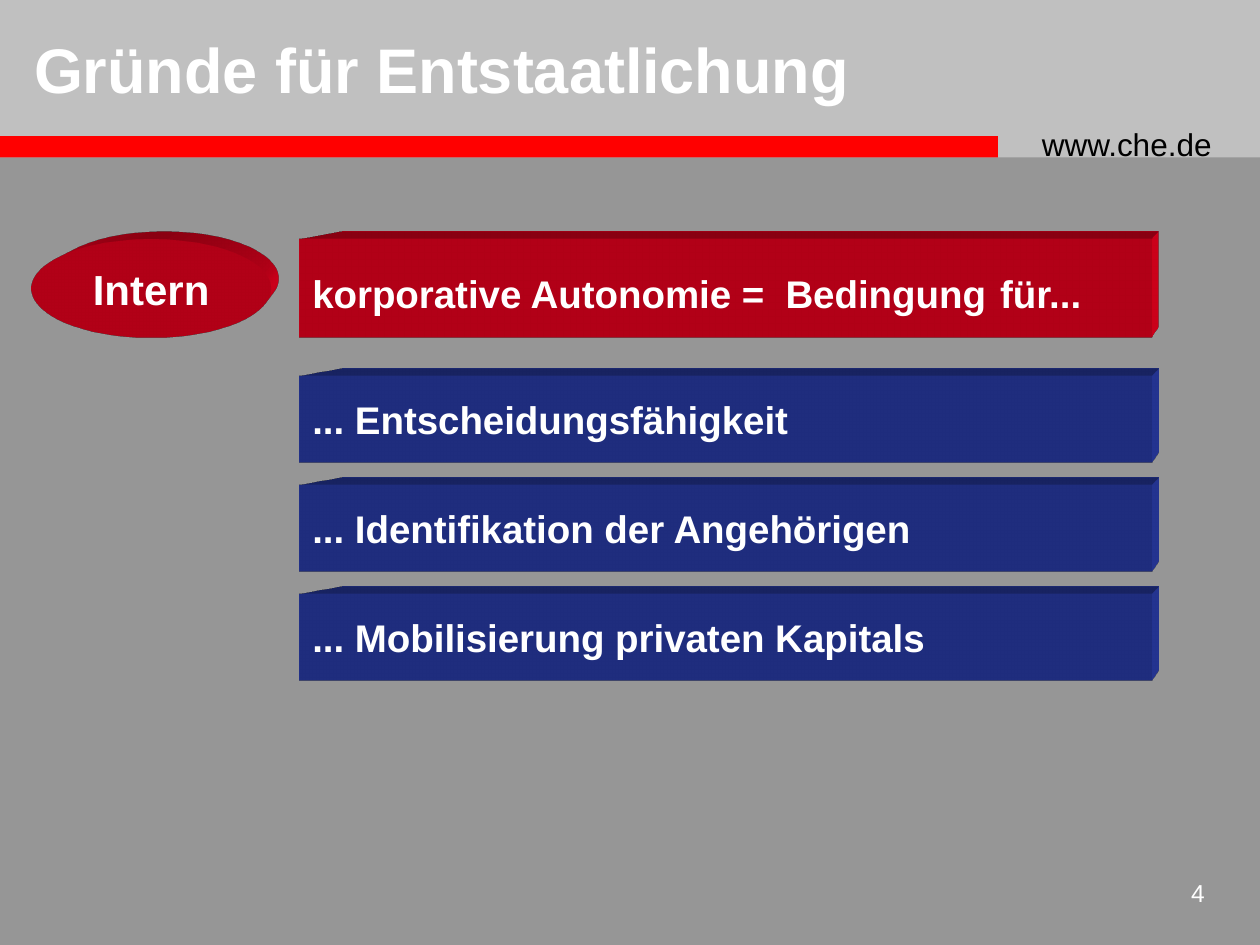
from lxml import etree
from pptx import Presentation
from pptx.dml.color import RGBColor
from pptx.enum.shapes import MSO_SHAPE
from pptx.enum.text import MSO_ANCHOR, PP_ALIGN
from pptx.oxml import parse_xml
from pptx.oxml.ns import nsdecls, qn
from pptx.util import Inches, Pt

RECT, OVAL = MSO_SHAPE.RECTANGLE, MSO_SHAPE.OVAL
LEFT, CENTER, RIGHT = PP_ALIGN.LEFT, PP_ALIGN.CENTER, PP_ALIGN.RIGHT
TOP, MIDDLE = MSO_ANCHOR.TOP, MSO_ANCHOR.MIDDLE
GREY = RGBColor(0x96, 0x96, 0x96)
SILVER = RGBColor(0xC0, 0xC0, 0xC0)
BRIGHT_RED = RGBColor(0xFF, 0x00, 0x00)
RED = RGBColor(0xE8, 0x00, 0x1E)
BLUE = RGBColor(0x29, 0x3B, 0xA5)
WHITE = RGBColor(0xFF, 0xFF, 0xFF)
BLACK = RGBColor(0x00, 0x00, 0x00)

TITLE = "Gründe für Entstaatlichung"
WEB_ADDRESS = "www.che.de"
PAGE_NUMBER = "4"
CATEGORY = "Intern"
CONDITION = [("korporative Autonomie =  Bedingung", 22), (" ", 28), ("für...", 22)]
CONSEQUENCES = [
    "... Entscheidungsfähigkeit",
    "... Identifikation der Angehörigen",
    "... Mobilisierung privaten Kapitals",
]

BAR_LEFT, BAR_WIDTH = 2.38, 6.75
HEAD_TOP, HEAD_HEIGHT = 1.9, 0.78
LIST_TOP, LIST_STEP, LIST_HEIGHT = 2.99, 0.865, 0.68


def write(shape, text, size=22, color=WHITE, bold=True, align=LEFT, anchor=MIDDLE, wrap=False):
    frame = shape.text_frame
    frame.word_wrap = wrap
    frame.vertical_anchor = anchor
    paragraph = frame.paragraphs[0]
    paragraph.alignment = align
    pieces = [(text, size)] if isinstance(text, str) else text
    for piece, piece_size in pieces:
        run = paragraph.add_run()
        run.text = piece
        run.font.name = "Arial"
        run.font.size = Pt(piece_size)
        run.font.bold = bold
        run.font.color.rgb = color


def add_block(slide, kind, box, color):
    block = slide.shapes.add_shape(kind, *map(Inches, box))
    block.shadow.inherit = False
    block.fill.solid()
    block.fill.fore_color.rgb = color
    block.line.fill.background()
    return block


def extrude(block, color):
    properties = block.fill._xPr
    properties.append(parse_xml(
        f'<a:scene3d {nsdecls("a")}><a:camera prst="legacyPerspectiveTopRight"/>'
        '<a:lightRig rig="legacyFlat3" dir="b"/></a:scene3d>'))
    depth = parse_xml(
        f'<a:sp3d {nsdecls("a")} extrusionH="430200" prstMaterial="legacyMatte"/>')
    extrusion_color = etree.SubElement(depth, qn("a:extrusionClr"))
    etree.SubElement(extrusion_color, qn("a:srgbClr"), val=str(color))
    properties.append(depth)


def add_raised(slide, kind, box, color, text, **text_format):
    block = add_block(slide, kind, box, color)
    extrude(block, color)
    write(block, text, **text_format)


def add_label(slide, box, text, **text_format):
    write(slide.shapes.add_textbox(*map(Inches, box)), text,
          bold=False, anchor=TOP, **text_format)


def main():
    deck = Presentation()
    deck.slide_width, deck.slide_height = Inches(10), Inches(7.5)
    slide = deck.slides.add_slide(deck.slide_layouts[5])
    slide.background.fill.solid()
    slide.background.fill.fore_color.rgb = GREY

    add_block(slide, RECT, (0, 0, 10, 1.25), SILVER)
    add_block(slide, RECT, (-0.01, 1.08, 7.93, 0.17), BRIGHT_RED)
    add_label(slide, (8.17, 0.94, 1.75, 0.4), WEB_ADDRESS, size=18, color=BLACK)
    add_label(slide, (9.08, 6.92, 0.58, 0.42), PAGE_NUMBER, size=14, align=RIGHT)

    title = slide.shapes.title
    title.left, title.top, title.width, title.height = map(Inches, (0.17, 0.17, 7.29, 0.75))
    write(title, TITLE, size=36, wrap=True)
    slide.shapes._spTree.append(title._element)

    add_raised(slide, RECT, (BAR_LEFT, HEAD_TOP, BAR_WIDTH, HEAD_HEIGHT), RED, CONDITION)
    for index, consequence in enumerate(CONSEQUENCES):
        top = LIST_TOP + index * LIST_STEP
        add_raised(slide, RECT, (BAR_LEFT, top, BAR_WIDTH, LIST_HEIGHT), BLUE, consequence)
    add_raised(slide, OVAL, (0.25, HEAD_TOP, 1.9, HEAD_HEIGHT), RED, CATEGORY,
               size=24, align=CENTER)

    deck.save("out.pptx")


if __name__ == "__main__":
    main()
